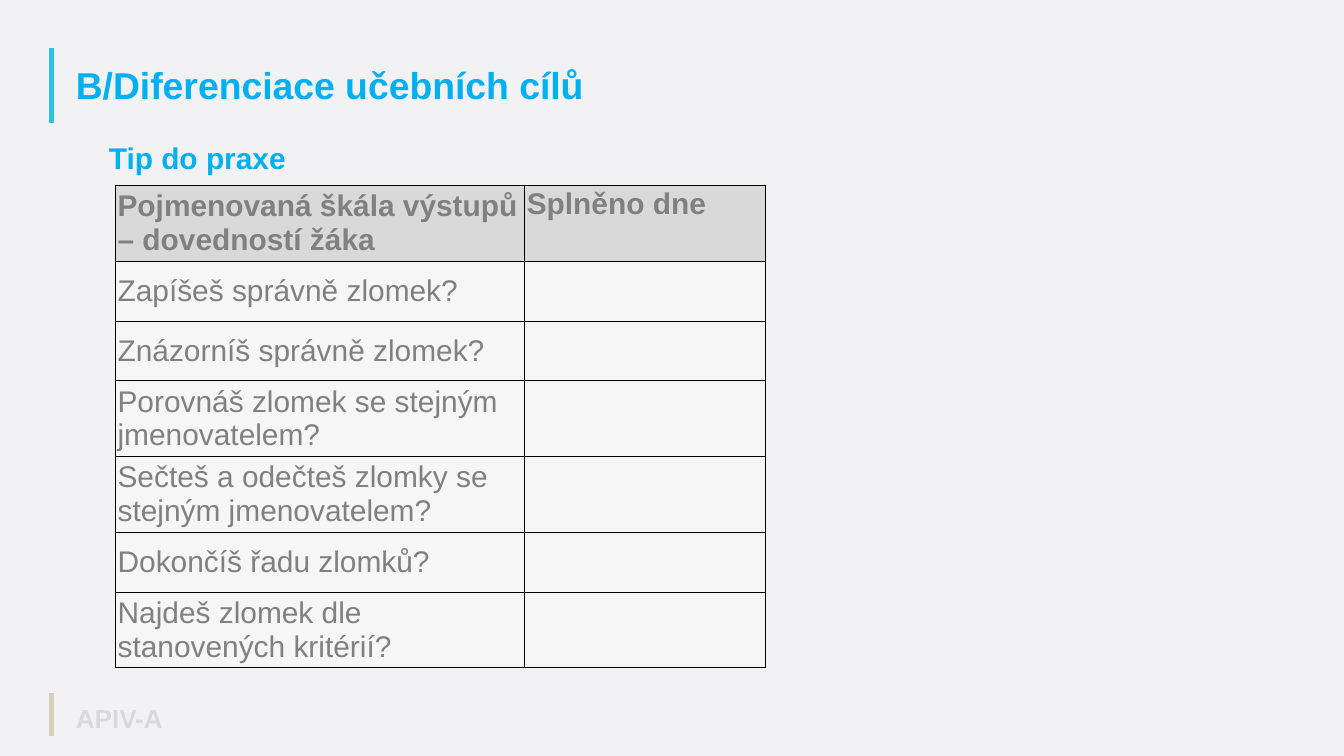
from dataclasses import dataclass

from lxml.etree import SubElement
from pptx import Presentation
from pptx.dml.color import RGBColor
from pptx.enum.shapes import MSO_CONNECTOR
from pptx.enum.text import MSO_ANCHOR
from pptx.oxml.ns import qn
from pptx.slide import Slide
from pptx.table import _Cell
from pptx.text.text import TextFrame
from pptx.util import Inches, Pt

SLIDE_WIDTH = Inches(20)
SLIDE_HEIGHT = Inches(11.25)
GRID_COLUMNS = 100
GRID_ROWS = 100

BACKGROUND = RGBColor(0xF2, 0xF2, 0xF5)
CYAN = RGBColor(0x2B, 0xC3, 0xE1)
SAND = RGBColor(0xD5, 0xD0, 0xB5)
BLUE = RGBColor(0x00, 0xB0, 0xF0)
GRAY = RGBColor(0x80, 0x80, 0x80)
PALE_GRAY = RGBColor(0xD9, 0xD9, 0xD9)
CELL_FILL = RGBColor(0xF6, 0xF6, 0xF6)
BLACK = RGBColor(0x00, 0x00, 0x00)

FONT = "Arial"
CELL_MARGIN = Inches(0.03)
BAR_COLUMN = 3.85


@dataclass(frozen=True)
class Bar:
    top: float
    bottom: float
    color: RGBColor


@dataclass(frozen=True)
class Label:
    text: str
    left: float
    top: float
    width: float
    height: float
    size: int
    color: RGBColor


BARS = [Bar(6.31, 16.27, CYAN), Bar(91.64, 97.42, SAND)]

LABELS = [
    Label("Tip do praxe", 7.6, 18.04, 85.4, 5.4, 32, BLUE),
    Label("B/Diferenciace učebních cílů", 5.15, 7.82, 90.25, 6.31, 40, BLUE),
    Label("APIV-A", 5.15, 92.5, 30, 4.9, 28, PALE_GRAY),
]

TABLE_LEFT = 8.6
TABLE_TOP = 24.53
TABLE_COLUMNS = [30.45, 17.9]
HEADER_HEIGHT = 8.89
SKILL_HEIGHT = 7.91
HEADERS = ["Pojmenovaná škála výstupů – dovedností žáka", "Splněno dne"]
SKILLS = [
    "Zapíšeš správně zlomek?",
    "Znázorníš správně zlomek?",
    "Porovnáš zlomek se stejným jmenovatelem?",
    "Sečteš a odečteš zlomky se stejným jmenovatelem?",
    "Dokončíš řadu zlomků?",
    "Najdeš zlomek dle stanovených kritérií?",
]


def across(columns: float) -> int:
    return round(SLIDE_WIDTH * columns / GRID_COLUMNS)


def down(rows: float) -> int:
    return round(SLIDE_HEIGHT * rows / GRID_ROWS)


def write_text(frame: TextFrame, text: str, *, size: int, color: RGBColor, bold: bool) -> None:
    frame.word_wrap = True
    para = frame.paragraphs[0]
    para.font.size = Pt(size)
    if text:
        span = para.add_run()
        span.text = text
        span.font.name = FONT
        span.font.size = Pt(size)
        span.font.bold = bold
        span.font.color.rgb = color


def draw_bar(page: Slide, bar: Bar) -> None:
    line = page.shapes.add_connector(
        MSO_CONNECTOR.STRAIGHT,
        across(BAR_COLUMN), down(bar.top), across(BAR_COLUMN), down(bar.bottom),
    )
    line.line.color.rgb = bar.color
    line.line.width = Pt(5)
    SubElement(line._element.spPr, qn("a:effectLst"))


def draw_label(page: Slide, label: Label) -> None:
    box = page.shapes.add_textbox(
        across(label.left), down(label.top), across(label.width), down(label.height)
    )
    write_text(box.text_frame, label.text, size=label.size, color=label.color, bold=True)


def draw_borders(cell: _Cell) -> None:
    properties = cell._tc.get_or_add_tcPr()
    for index, side in enumerate(("lnL", "lnR", "lnT", "lnB")):
        border = properties.makeelement(qn(f"a:{side}"), {"w": str(Pt(1))})
        fill = SubElement(border, qn("a:solidFill"))
        SubElement(fill, qn("a:srgbClr"), val=str(BLACK))
        properties.insert(index, border)


def draw_cell(cell: _Cell, text: str, *, header: bool, anchor: MSO_ANCHOR) -> None:
    cell.margin_left = cell.margin_right = CELL_MARGIN
    cell.margin_top = cell.margin_bottom = CELL_MARGIN
    cell.vertical_anchor = anchor
    cell.fill.solid()
    cell.fill.fore_color.rgb = PALE_GRAY if header else CELL_FILL
    write_text(cell.text_frame, text, size=32, color=GRAY, bold=header)
    draw_borders(cell)


def draw_table(page: Slide) -> None:
    lines = [HEADERS] + [[skill, ""] for skill in SKILLS]
    heights = [HEADER_HEIGHT] + [SKILL_HEIGHT] * len(SKILLS)
    table = page.shapes.add_table(
        len(lines), len(TABLE_COLUMNS),
        across(TABLE_LEFT), down(TABLE_TOP), across(sum(TABLE_COLUMNS)), down(sum(heights)),
    ).table
    table.horz_banding = False
    for column, width in zip(table.columns, TABLE_COLUMNS):
        column.width = across(width)
    for row_index, (texts, height) in enumerate(zip(lines, heights)):
        table.rows[row_index].height = down(height)
        for column_index, text in enumerate(texts):
            draw_cell(
                table.cell(row_index, column_index),
                text,
                header=row_index == 0,
                anchor=MSO_ANCHOR.TOP if column_index else MSO_ANCHOR.MIDDLE,
            )


def main() -> None:
    deck = Presentation()
    deck.slide_width = SLIDE_WIDTH
    deck.slide_height = SLIDE_HEIGHT
    page = deck.slides.add_slide(deck.slide_layouts[6])
    page.background.fill.solid()
    page.background.fill.fore_color.rgb = BACKGROUND
    for bar in BARS:
        draw_bar(page, bar)
    for label in LABELS:
        draw_label(page, label)
    draw_table(page)
    deck.save("out.pptx")


if __name__ == "__main__":
    main()
